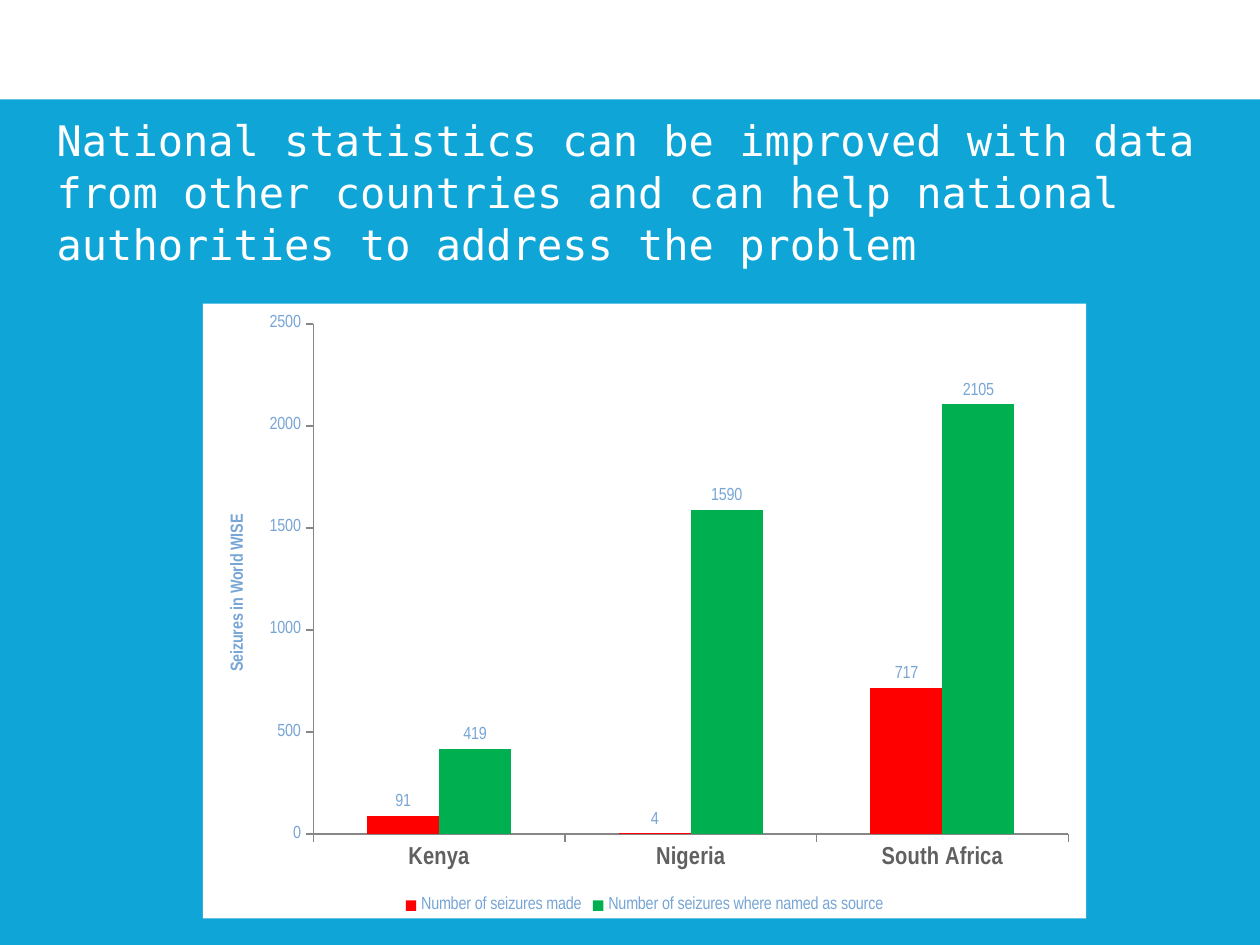
from lxml import etree
from pptx import Presentation
from pptx import util as u
from pptx.chart.data import CategoryChartData
from pptx.dml.color import RGBColor
from pptx.enum import chart as ch, shapes, text
from pptx.oxml import parse_xml
from pptx.oxml.ns import nsdecls, qn

BLUE = RGBColor(0x0F, 0xA6, 0xD7)
WHITE = RGBColor(0xFF, 0xFF, 0xFF)
PALE = RGBColor(0x77, 0xA5, 0xD5)
GRAY = RGBColor(0x60, 0x60, 0x60)
RULE = RGBColor(0x86, 0x86, 0x86)
RED = RGBColor(0xFF, 0x00, 0x00)
GREEN = RGBColor(0x00, 0xB0, 0x50)

MONO = "DejaVu Sans Mono"
NARROW = "Arial Narrow"


def style(font, name=NARROW, size=10, color=PALE, bold=False):
    font.name, font.size, font.bold = name, u.Pt(size), bold
    font.color.rgb = color


def write(frame, words, **form):
    """Put one formatted run of text in a text frame."""
    para = frame.paragraphs[0]
    run = para.add_run()
    run.text = words
    style(run.font, **form)
    return para


def set_plot(chart, x, y, w, h):
    """Fix the inner plot area, as fractions of the chart."""
    area = chart._chartSpace.chart.plotArea
    for old in area.findall(qn("c:layout")):
        area.remove(old)
    layout = etree.Element(qn("c:layout"))
    manual = etree.SubElement(layout, qn("c:manualLayout"))
    parts = dict(layoutTarget="inner", xMode="edge", yMode="edge", x=x, y=y, w=w, h=h)
    for tag, val in parts.items():
        etree.SubElement(manual, qn("c:" + tag)).set("val", str(val))
    area.insert(0, layout)


def fill_chart(chart, color):
    chart._chartSpace.chart.addnext(parse_xml(
        f'<c:spPr {nsdecls("c", "a")}><a:solidFill><a:srgbClr val="{color}"/>'
        "</a:solidFill><a:ln><a:noFill/></a:ln></c:spPr>"))


class Page:
    def __init__(self, deck):
        self.slide = deck.slides.add_slide(deck.slide_layouts[5])
        back = self.slide.background.fill
        back.solid()
        back.fore_color.rgb = BLUE

    def band(self, *box):
        rect = self.slide.shapes.add_shape(
            shapes.MSO_SHAPE.RECTANGLE, *map(u.Inches, box))
        rect.shadow.inherit = False
        rect.fill.solid()
        rect.fill.fore_color.rgb = WHITE
        rect.line.fill.background()

    def title(self, words, *box):
        head = self.slide.shapes.title
        head.left, head.top, head.width, head.height = map(u.Inches, box)
        frame = head.text_frame
        frame.word_wrap = True
        frame.auto_size = text.MSO_AUTO_SIZE.NONE
        frame.vertical_anchor = text.MSO_ANCHOR.TOP
        para = write(frame, words, name=MONO, size=24, color=WHITE)
        para.alignment = text.PP_ALIGN.LEFT
        para.line_spacing = 1.04

    def columns(self, cats, series, label, *box):
        """Add a column chart; series holds (name, values, colour)."""
        data = CategoryChartData()
        data.categories = cats
        for name, vals, _ in series:
            data.add_series(name, vals)
        chart = self.slide.shapes.add_chart(
            ch.XL_CHART_TYPE.COLUMN_CLUSTERED, *map(u.Inches, box), data).chart
        fill_chart(chart, WHITE)
        style(chart.font)
        chart.has_title = False
        chart.has_legend = True
        chart.legend.position = ch.XL_LEGEND_POSITION.BOTTOM
        chart.legend.include_in_layout = False
        style(chart.legend.font)
        set_plot(chart, 0.125, 0.033, 0.855, 0.83)

        plot = chart.plots[0]
        plot.gap_width, plot.overlap = 150, 0
        plot.vary_by_categories = False
        for bars, (_, _, color) in zip(plot.series, series):
            bars.format.fill.solid()
            bars.format.fill.fore_color.rgb = color
            bars.invert_if_negative = False
            tags = bars.data_labels
            tags.show_value = True
            tags.position = ch.XL_LABEL_POSITION.OUTSIDE_END
            style(tags.font)

        for axis in (chart.category_axis, chart.value_axis):
            axis.has_major_gridlines = False
            axis.major_tick_mark = ch.XL_TICK_MARK.OUTSIDE
            axis.format.line.color.rgb = RULE
            axis.format.line.width = u.Pt(0.75)
        style(chart.category_axis.tick_labels.font, size=14, color=GRAY, bold=True)
        scale = chart.value_axis
        style(scale.tick_labels.font)
        scale.minimum_scale, scale.maximum_scale, scale.major_unit = 0, 2500, 500
        write(scale.axis_title.text_frame, label, bold=True)


def main():
    deck = Presentation()
    deck.slide_width, deck.slide_height = u.Inches(10), u.Inches(7.5)
    page = Page(deck)
    page.band(0, -0.19, 10, 0.98)
    page.columns(
        ["Kenya", "Nigeria", "South Africa"],
        [("Number of seizures made", (91, 4, 717), RED),
         ("Number of seizures where named as source", (419, 1590, 2105), GREEN)],
        "Seizures in World WISE", 1.61, 2.41, 7.01, 4.88)
    page.title(
        "National statistics can be improved with data from other countries "
        "and can help national authorities to address the problem",
        0.35, 0.84, 9.53, 1.31)
    deck.save("out.pptx")


if __name__ == "__main__":
    main()
